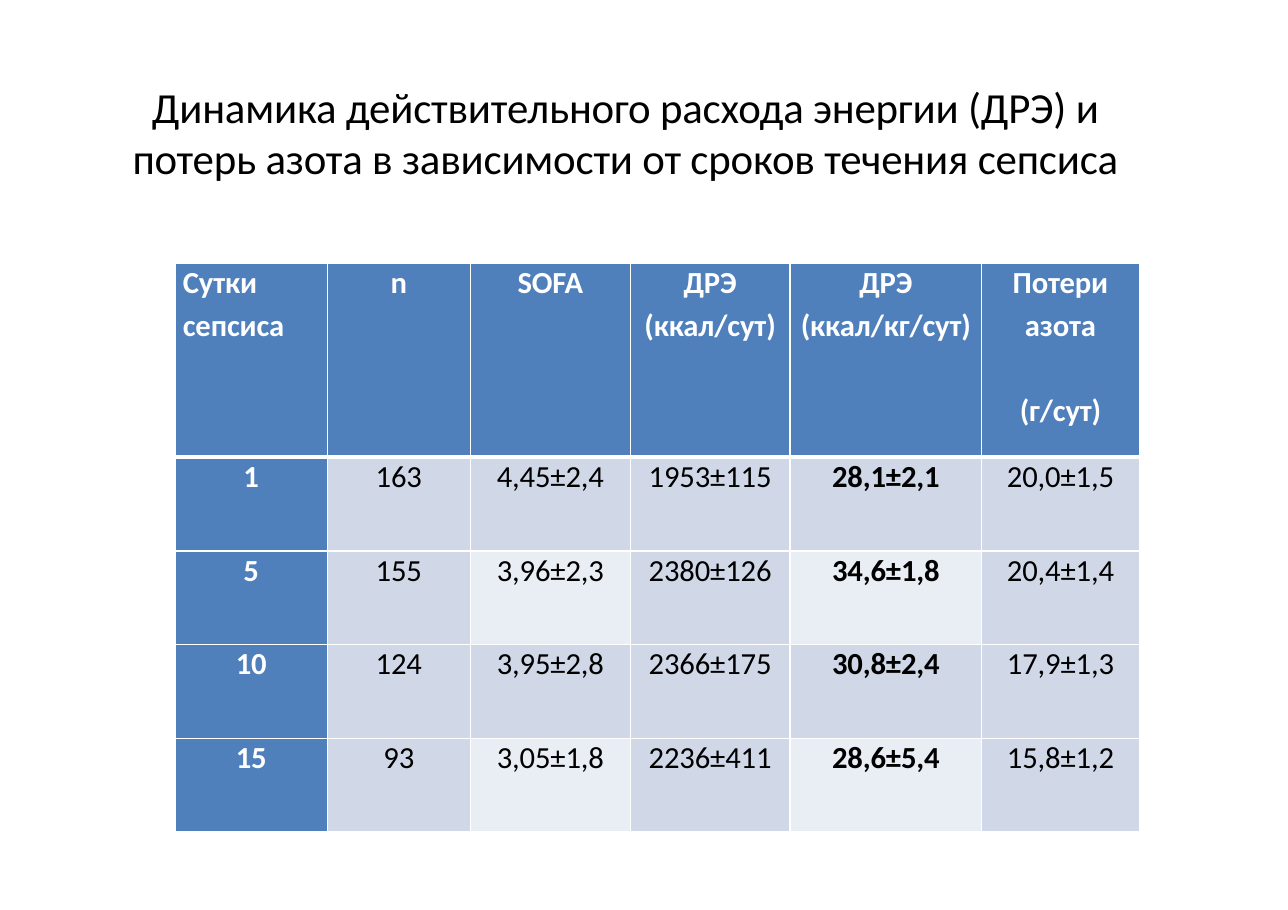
import pptx
import pptx.dml.color
import pptx.enum.text
import pptx.oxml
import pptx.util
from pptx.util import Inches

BLUE, BAND, PALE, WHITE, BLACK = "4F80BC", "D0D8E8", "E9EDF4", "FFFFFF", "000000"
CENTER = pptx.enum.text.PP_ALIGN.CENTER


def format_paragraph(paragraph, size, color, bold, before):
    paragraph.alignment = CENTER
    paragraph.space_before = pptx.util.Pt(before)
    for run in paragraph.runs:
        run.font.name = "Calibri"
        run.font.size = pptx.util.Pt(size)
        run.font.bold = bold
        run.font.color.rgb = pptx.dml.color.RGBColor.from_string(color)
        run._r.get_or_add_rPr().set("spc", "-10")


def add_border(cell, side, width):
    cell._tc.get_or_add_tcPr().append(pptx.oxml.parse_xml(
        '<a:ln%s xmlns:a="http://schemas.openxmlformats.org/drawingml/2006/main" w="%d">'
        '<a:solidFill><a:srgbClr val="%s"/></a:solidFill></a:ln%s>'
        % (side, pptx.util.Pt(width), WHITE, side)))


presentation = pptx.Presentation()
presentation.slide_width = Inches(11.69)
presentation.slide_height = Inches(8.26)
slide = presentation.slides.add_slide(presentation.slide_layouts[6])

title = slide.shapes.add_textbox(Inches(1.14), Inches(0.72), Inches(9.07), Inches(0.96))
title_frame = title.text_frame
title_frame.word_wrap = True
title_frame.margin_left = title_frame.margin_right = title_frame.margin_bottom = 0
title_frame.margin_top = Inches(0.01)
title_frame.text = (
    "Динамика действительного расхода энергии (ДРЭ) и\v"
    "потерь азота в зависимости от сроков течения сепсиса")
format_paragraph(title_frame.paragraphs[0], 28, BLACK, False, 0.9)

rows = [
    ["Сутки\nсепсиса", "n", "SOFA", "ДРЭ\n(ккал/сут)", "ДРЭ\n(ккал/кг/сут)",
     "Потери\nазота\n(г/сут)"],
    ["1", "163", "4,45±2,4", "1953±115", "28,1±2,1", "20,0±1,5"],
    ["5", "155", "3,96±2,3", "2380±126", "34,6±1,8", "20,4±1,4"],
    ["10", "124", "3,95±2,8", "2366±175", "30,8±2,4", "17,9±1,3"],
    ["15", "93", "3,05±1,8", "2236±411", "28,6±5,4", "15,8±1,2"],
]
column_widths = [1.38, 1.3, 1.45, 1.45, 1.74, 1.43]
row_heights = [1.76, 0.85, 0.85, 0.85, 0.85]
space_before = [0.8, 3.6, 31]
ENERGY_PER_KG = 4
pale_columns = (2, ENERGY_PER_KG)

table = slide.shapes.add_table(
    len(rows), len(column_widths), Inches(1.59), Inches(2.39),
    Inches(sum(column_widths)), Inches(sum(row_heights))).table
for column, width in zip(table.columns, column_widths):
    column.width = Inches(width)
for row, height in zip(table.rows, row_heights):
    row.height = Inches(height)

for row_index, values in enumerate(rows):
    for column_index, value in enumerate(values):
        cell = table.cell(row_index, column_index)
        heading = row_index == 0 or column_index == 0
        pale = row_index in (2, 4) and column_index in pale_columns
        add_border(cell, "L", 1)
        add_border(cell, "R", 1)
        add_border(cell, "T", 3 if row_index == 1 else 1)
        add_border(cell, "B", 3 if row_index == 0 else 1)
        cell.fill.solid()
        cell.fill.fore_color.rgb = pptx.dml.color.RGBColor.from_string(
            BLUE if heading else PALE if pale else BAND)
        cell.margin_left = cell.margin_right = cell.margin_bottom = 0
        cell.margin_top = Inches(0.01)
        cell.text_frame.text = value
        for paragraph, before in zip(cell.text_frame.paragraphs, space_before):
            format_paragraph(paragraph, 20, WHITE if heading else BLACK,
                             heading or column_index == ENERGY_PER_KG, before)

days_heading = table.cell(0, 0)
days_heading.margin_left = Inches(0.07)
for paragraph in days_heading.text_frame.paragraphs:
    paragraph.alignment = pptx.enum.text.PP_ALIGN.LEFT

presentation.save("out.pptx")
